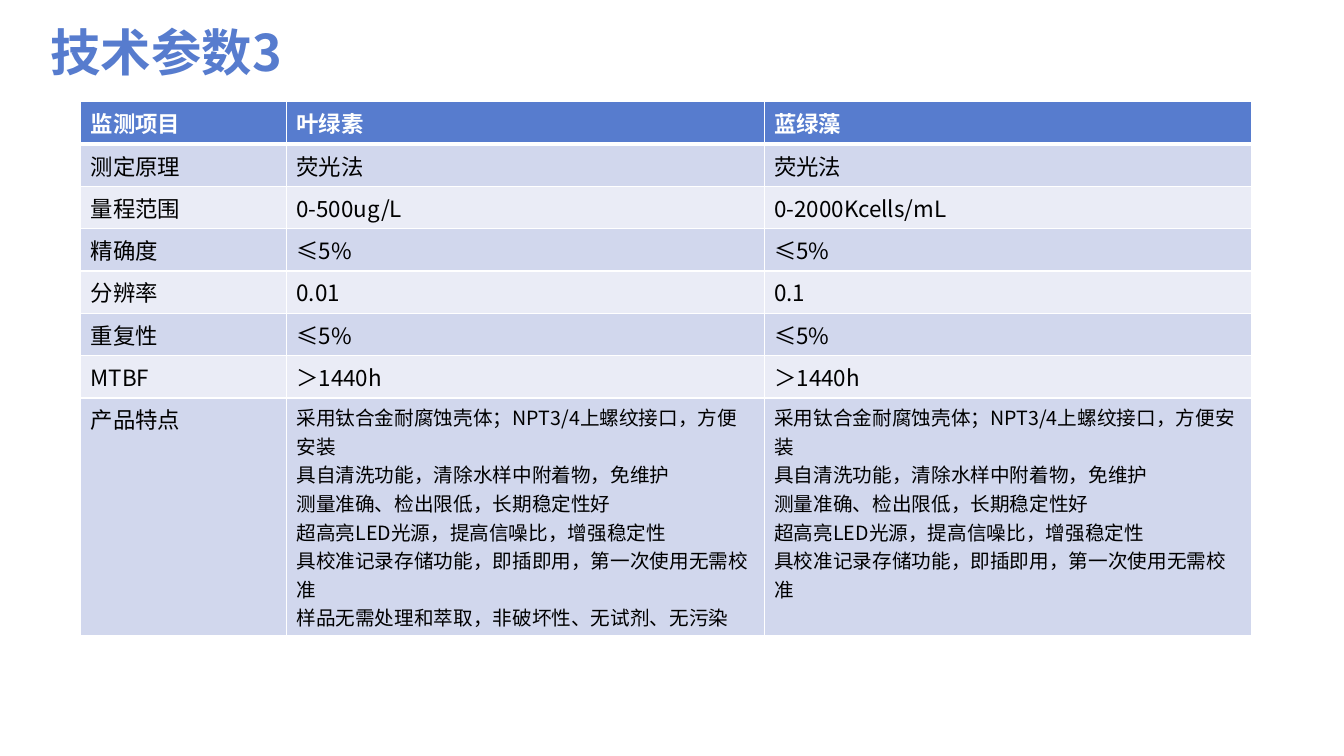
from lxml import etree
from pptx import Presentation
from pptx.dml.color import RGBColor
from pptx.enum.text import MSO_ANCHOR
from pptx.oxml.ns import qn
from pptx.util import Pt

MIDDLE = MSO_ANCHOR.MIDDLE
PX = 9144  # EMU per px, 100 px to the inch
FONT = "Noto Sans CJK SC"
COLORS = {"blue": "577CCE", "band_dark": "D1D7ED", "band_light": "EAECF6",
          "white": "FFFFFF", "black": "000000"}

COLUMN_WIDTHS = [204, 474, 483]
ROW_HEIGHT = 42
FEATURES_HEIGHT = 236  # eight lines of text and the cell margins
SHARED_FEATURES = [
    "采用钛合金耐腐蚀壳体；NPT3/4上螺纹接口，方便安装",
    "具自清洗功能，清除水样中附着物，免维护",
    "测量准确、检出限低，长期稳定性好",
    "超高亮LED光源，提高信噪比，增强稳定性",
    "具校准记录存储功能，即插即用，第一次使用无需校准",
]
CHLOROPHYLL_FEATURES = SHARED_FEATURES + ["样品无需处理和萃取，非破坏性、无试剂、无污染"]
PARAMETERS = [
    ("监测项目", "叶绿素", "蓝绿藻"),
    ("测定原理", "荧光法", "荧光法"),
    ("量程范围", "0-500ug/L", "0-2000Kcells/mL"),
    ("精确度", "≤5%", "≤5%"),
    ("分辨率", "0.01", "0.1"),
    ("重复性", "≤5%", "≤5%"),
    ("MTBF", "＞1440h", "＞1440h"),
    ("产品特点", CHLOROPHYLL_FEATURES, SHARED_FEATURES),
]


def write_text(frame, content, size=16, color="black", bold=False):
    """Write one string, or a list of strings as paragraphs."""
    lines = [content] if isinstance(content, str) else content
    for index, line in enumerate(lines):
        paragraph = frame.add_paragraph() if index else frame.paragraphs[0]
        run = paragraph.add_run()
        run.text = line
        run.font.name = FONT
        run.font.size = Pt(size)
        run.font.bold = bold
        run.font.color.rgb = RGBColor.from_string(COLORS[color])
        east_asian = etree.SubElement(run.font._element, qn("a:ea"))
        east_asian.set("typeface", FONT)


def set_borders(cell, top=1, bottom=1):
    """Give a cell white borders; widths are in points."""
    properties = cell._tc.get_or_add_tcPr()
    widths = {"a:lnL": 1, "a:lnR": 1, "a:lnT": top, "a:lnB": bottom}
    for position, (side, width) in enumerate(widths.items()):
        line = etree.Element(qn(side), w=str(Pt(width)))
        fill = etree.SubElement(line, qn("a:solidFill"))
        etree.SubElement(fill, qn("a:srgbClr"), val=COLORS["white"])
        properties.insert(position, line)


def add_title(slide, left, top, width, height):
    title = slide.shapes.add_textbox(left * PX, top * PX, width * PX, height * PX)
    frame = title.text_frame
    frame.word_wrap = True
    frame.vertical_anchor = MIDDLE
    frame.margin_left = frame.margin_top = frame.margin_right = frame.margin_bottom = 0
    write_text(frame, "技术参数3", size=36, color="blue", bold=True)


def add_parameter_table(slide, left, top):
    heights = [ROW_HEIGHT] * (len(PARAMETERS) - 1) + [FEATURES_HEIGHT]
    table = slide.shapes.add_table(
        len(PARAMETERS), len(COLUMN_WIDTHS), left * PX, top * PX,
        sum(COLUMN_WIDTHS) * PX, sum(heights) * PX).table
    for column, width in zip(table.columns, COLUMN_WIDTHS):
        column.width = width * PX
    for row_index, (values, height) in enumerate(zip(PARAMETERS, heights)):
        table.rows[row_index].height = height * PX
        is_header = row_index == 0
        band = "blue" if is_header else "band_dark" if row_index % 2 else "band_light"
        for column_index, value in enumerate(values):
            cell = table.cell(row_index, column_index)
            cell.fill.solid()
            cell.fill.fore_color.rgb = RGBColor.from_string(COLORS[band])
            # The rule under the header is thicker than the others
            set_borders(cell, top=3 if row_index == 1 else 1, bottom=3 if is_header else 1)
            write_text(cell.text_frame, value, size=16 if isinstance(value, str) else 14,
                       color="white" if is_header else "black", bold=is_header)


def main():
    presentation = Presentation()
    presentation.slide_width = 1333 * PX
    presentation.slide_height = 750 * PX
    slide = presentation.slides.add_slide(presentation.slide_layouts[6])
    add_title(slide, 50, 17, 1233, 67)
    add_parameter_table(slide, 80, 101)
    presentation.save("out.pptx")


if __name__ == "__main__":
    main()
